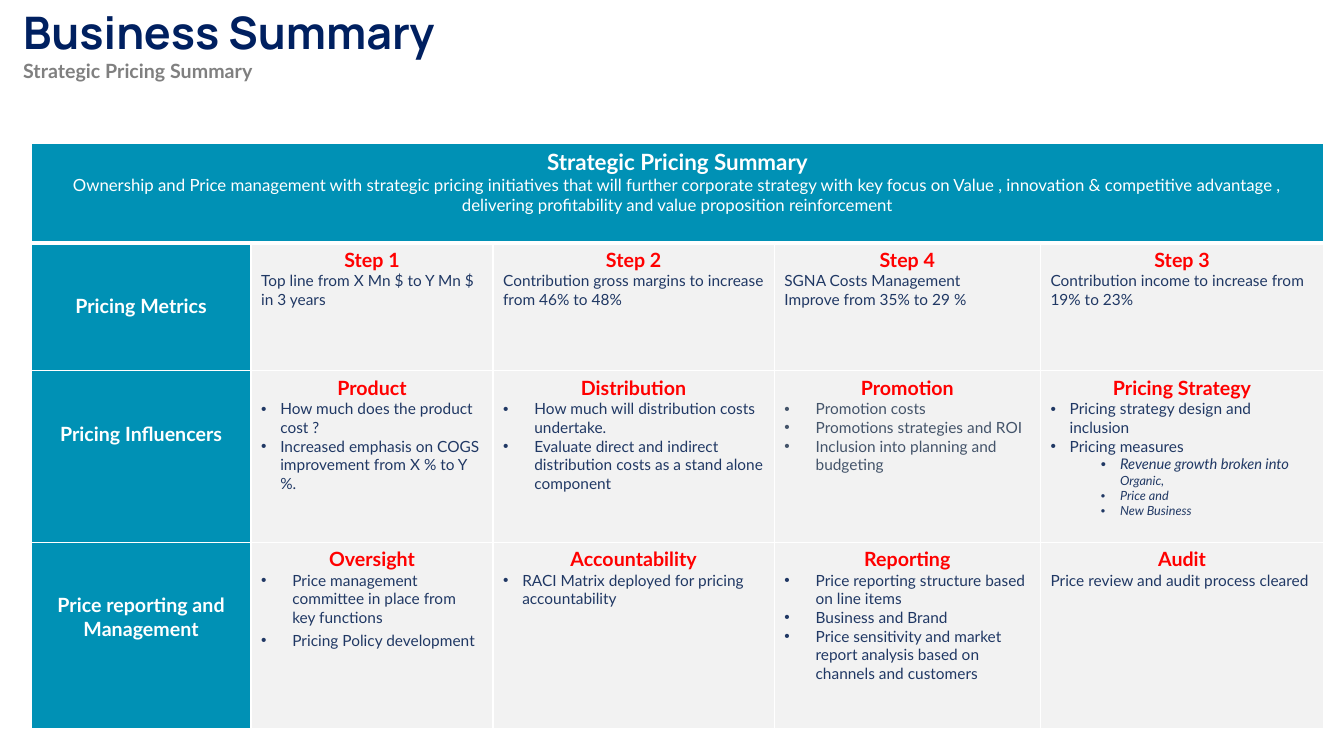
import pptx
import pptx.dml.color
import pptx.enum.text
import pptx.oxml
import pptx.oxml.ns
import pptx.util
from pptx.util import Inches

TEAL, PALE, WHITE = "0091B5", "F2F2F2", "FFFFFF"
NAVY, SLATE, RED = "203864", "44546A", "FF0000"
LEFT = pptx.enum.text.PP_ALIGN.LEFT
CENTER = pptx.enum.text.PP_ALIGN.CENTER
TOP = pptx.enum.text.MSO_ANCHOR.TOP

COLUMN_WIDTHS = [2.18, 2.4, 2.79, 2.64, 2.81]
ROW_HEIGHTS = [0.99, 1.27, 1.7, 1.85]
NARROW, WIDE = 0.19, 0.31


def color(value):
    return pptx.dml.color.RGBColor.from_string(value)


class PricingSlide:
    """Holds the text style and the current slide."""

    font = "Lato"

    def __init__(self, deck):
        self.page = deck.slides.add_slide(deck.slide_layouts[5])

    def add_span(self, para, text, size, hue, bold=False, italic=False, font=None):
        span = para.add_run()
        span.text = text
        span.font.name = font or self.font
        span.font.size = pptx.util.Pt(size)
        span.font.bold = bold
        span.font.italic = italic
        span.font.color.rgb = color(hue)

    def next_para(self, frame, align=LEFT):
        first = frame.paragraphs[0]
        para = frame.add_paragraph() if first.runs else first
        para.alignment = align
        return para

    def add_bullet(self, para, left, hang):
        properties = para._p.get_or_add_pPr()
        properties.set("marL", str(Inches(left)))
        properties.set("indent", str(-Inches(hang)))
        for tag, name, value in (("buFont", "typeface", "Arial"), ("buChar", "char", "•")):
            mark = properties.makeelement(pptx.oxml.ns.qn("a:" + tag), {name: value})
            properties.append(mark)

    def add_heading(self, title, subtitle):
        box = self.page.shapes.title
        box.left, box.top = Inches(0.13), Inches(0)
        box.width, box.height = Inches(12.29), Inches(0.88)
        frame = box.text_frame
        frame.word_wrap = True
        frame.auto_size = pptx.enum.text.MSO_AUTO_SIZE.NONE
        frame.vertical_anchor = TOP
        self.add_span(self.next_para(frame), title, 32, "002060", True, font="Manrope")
        self.add_span(self.next_para(frame), subtitle, 14, "808080", True)

    def add_grid(self):
        grid = self.page.shapes.add_table(
            len(ROW_HEIGHTS), len(COLUMN_WIDTHS), Inches(0.31), Inches(1.42),
            Inches(sum(COLUMN_WIDTHS)), Inches(sum(ROW_HEIGHTS))).table
        grid.first_row = grid.horz_banding = False
        for column, width in zip(grid.columns, COLUMN_WIDTHS):
            column.width = Inches(width)
        for row, height in zip(grid.rows, ROW_HEIGHTS):
            row.height = Inches(height)
        for r in range(len(ROW_HEIGHTS)):
            for c in range(len(COLUMN_WIDTHS)):
                self.style_cell(grid.cell(r, c), r, TEAL if r == 0 or c == 0 else PALE)
        return grid

    def style_cell(self, cell, row, fill):
        widths = {"L": 1, "R": 1, "T": 3 if row == 1 else 1, "B": 3 if row == 0 else 1}
        properties = cell._tc.get_or_add_tcPr()
        for side, width in widths.items():
            properties.append(pptx.oxml.parse_xml(
                f'<a:ln{side} {pptx.oxml.ns.nsdecls("a")} w="{pptx.util.Pt(width)}">'
                f'<a:solidFill><a:srgbClr val="{WHITE}"/></a:solidFill></a:ln{side}>'))
        cell.fill.solid()
        cell.fill.fore_color.rgb = color(fill)
        cell.vertical_anchor = TOP

    def fill_banner(self, cell, title, text):
        self.add_span(self.next_para(cell.text_frame, CENTER), title, 16, WHITE, True)
        self.add_span(self.next_para(cell.text_frame, CENTER), text, 12, WHITE)

    def fill_label(self, cell, text):
        cell.margin_top = Inches(0.51)
        self.add_span(self.next_para(cell.text_frame, CENTER), text, 14, WHITE, True)

    def fill_topic(self, cell, heading, items, hang=0, hue=NAVY, gap=0):
        frame = cell.text_frame
        self.add_span(self.next_para(frame, CENTER), heading, 14, RED, True)
        for index, item in enumerate(items):
            para = self.next_para(frame)
            if index and gap:
                para.space_before = pptx.util.Pt(gap)
            if hang:
                self.add_bullet(para, hang, hang)
            self.add_span(para, item, 11, hue)

    def fill_details(self, cell, details):
        for detail in details:
            para = self.next_para(cell.text_frame)
            para.level = 1
            self.add_bullet(para, 0.69, NARROW)
            for text, size in detail:
                self.add_span(para, text, size, NAVY, italic=True)


# Each row: label, then topics as heading, items, hanging indent, colour, gap
ROWS = [
    ("Pricing Metrics", [
        ("Step 1", ["Top line from X Mn $ to Y Mn $ in 3 years"]),
        ("Step 2", ["Contribution gross margins to increase from 46% to 48%"]),
        ("Step 4", ["SGNA Costs Management", "Improve from 35% to 29 %"]),
        ("Step 3", ["Contribution income to increase from 19% to 23%"]),
    ]),
    ("Pricing Influencers", [
        ("Product", ["How much does the product cost ?",
                     "Increased emphasis on COGS improvement from X % to Y %."], NARROW),
        ("Distribution", ["How much will distribution costs undertake.",
                          "Evaluate direct and indirect distribution costs as a "
                          "stand alone component"], WIDE),
        ("Promotion", ["Promotion costs", "Promotions strategies and ROI",
                       "Inclusion into planning and budgeting"], WIDE, SLATE),
        ("Pricing Strategy", ["Pricing strategy design and inclusion",
                              "Pricing measures"], NARROW),
    ]),
    ("Price reporting and Management", [
        ("Oversight", ["Price management committee in place from key functions",
                       "Pricing Policy development"], WIDE, NAVY, 3),
        ("Accountability", ["RACI Matrix deployed for pricing accountability"], NARROW),
        ("Reporting", ["Price reporting structure based on line items",
                       "Business and Brand",
                       "Price sensitivity and market report analysis based on "
                       "channels and customers"], WIDE),
        ("Audit", ["Price review and audit process cleared"]),
    ]),
]
GROWTH_DETAILS = [
    [("Revenue growth broken into ", 10.5), ("Organic,", 9)],
    [("Price and", 9)],
    [("New Business", 9)],
]


def main():
    deck = pptx.Presentation()
    deck.slide_width, deck.slide_height = Inches(13.33), Inches(7.5)
    slide = PricingSlide(deck)

    # Table banner
    grid = slide.add_grid()
    grid.cell(0, 0).merge(grid.cell(0, len(COLUMN_WIDTHS) - 1))
    slide.fill_banner(
        grid.cell(0, 0), "Strategic Pricing Summary",
        "Ownership and Price management with strategic pricing initiatives that will "
        "further corporate strategy with key focus on Value , innovation & competitive "
        "advantage , delivering profitability and value proposition reinforcement")

    # Table body
    for r, (label, topics) in enumerate(ROWS, start=1):
        slide.fill_label(grid.cell(r, 0), label)
        for c, topic in enumerate(topics, start=1):
            slide.fill_topic(grid.cell(r, c), *topic)
    slide.fill_details(grid.cell(2, 4), GROWTH_DETAILS)

    # Heading
    slide.add_heading("Business Summary", "Strategic Pricing Summary")
    deck.save("out.pptx")


if __name__ == "__main__":
    main()
